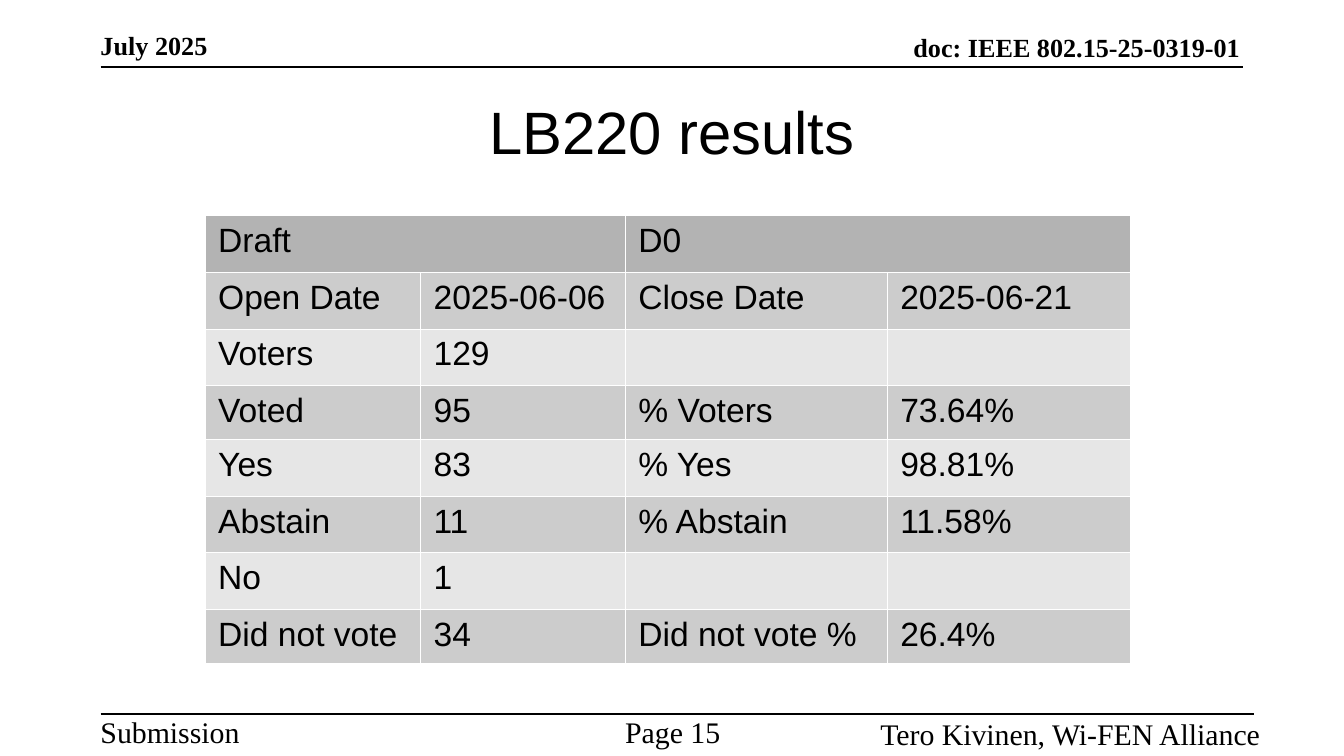
from lxml.etree import SubElement
from pptx import Presentation
from pptx.dml.color import RGBColor
from pptx.enum.shapes import MSO_CONNECTOR
from pptx.enum.text import MSO_ANCHOR, PP_ALIGN
from pptx.oxml.ns import qn
from pptx.util import Cm, Pt

COLORS = {
    "ink": "000000",
    "border": "FFFFFF",
    "header": "B3B3B3",
    "dark_band": "CCCCCC",
    "light_band": "E6E6E6",
}
SERIF = "Times New Roman"
SANS = "Arial"

RESULTS = [
    ["Draft", "", "D0", ""],
    ["Open Date", "2025-06-06", "Close Date", "2025-06-21"],
    ["Voters", "129", "", ""],
    ["Voted", "95", "% Voters", "73.64%"],
    ["Yes", "83", "% Yes", "98.81%"],
    ["Abstain", "11", "% Abstain", "11.58%"],
    ["No", "1", "", ""],
    ["Did not vote", "34", "Did not vote %", "26.4%"],
]
COLUMN_WIDTHS = [4.07, 3.87, 4.95, 4.6]
ROW_HEIGHTS = [1.07, 1.07, 1.07, 0.97, 1.07, 1.07, 1.07, 0.97]


class SlideBuilder:
    def __init__(self, slide):
        self.slide = slide

    def add_run(self, paragraph, text, size, font, bold=False):
        run = paragraph.add_run()
        run.text = text
        run.font.size = Pt(size)
        run.font.name = font
        run.font.bold = bold
        run.font.color.rgb = RGBColor.from_string(COLORS["ink"])

    def text(self, text, box, size, font=SERIF, bold=False,
             align=PP_ALIGN.LEFT, anchor=MSO_ANCHOR.TOP):
        shape = self.slide.shapes.add_textbox(*[Cm(length) for length in box])
        frame = shape.text_frame
        frame.word_wrap = True
        frame.vertical_anchor = anchor
        frame.margin_left = frame.margin_right = 0
        frame.margin_top = frame.margin_bottom = 0
        paragraph = frame.paragraphs[0]
        paragraph.alignment = align
        self.add_run(paragraph, text, size, font, bold)

    def rule(self, left, right, top):
        connector = self.slide.shapes.add_connector(
            MSO_CONNECTOR.STRAIGHT, Cm(left), Cm(top), Cm(right), Cm(top))
        connector.line.color.rgb = RGBColor.from_string(COLORS["ink"])
        connector.line.width = Pt(1)
        SubElement(connector._element.spPr, qn("a:effectLst"))

    def style_cell(self, cell, color):
        properties = cell._tc.get_or_add_tcPr()
        for side in ("lnL", "lnR", "lnT", "lnB"):
            line = SubElement(properties, qn(f"a:{side}"), w=str(Pt(0.06)))
            fill = SubElement(line, qn("a:solidFill"))
            SubElement(fill, qn("a:srgbClr"), val=COLORS["border"])
        cell.fill.solid()
        cell.fill.fore_color.rgb = RGBColor.from_string(COLORS[color])

    def table(self, rows, left, top, widths, heights):
        table = self.slide.shapes.add_table(
            len(rows), len(widths), Cm(left), Cm(top),
            Cm(sum(widths)), Cm(sum(heights))).table
        table.first_row = False
        table.horz_banding = False
        for column, width in zip(table.columns, widths):
            column.width = Cm(width)
        for row, height in zip(table.rows, heights):
            row.height = Cm(height)
        for first in (0, 2):
            table.cell(0, first).merge(table.cell(0, first + 1))
        for row_index, values in enumerate(rows):
            band = "dark_band" if row_index % 2 else "light_band"
            for column_index, value in enumerate(values):
                cell = table.cell(row_index, column_index)
                self.style_cell(cell, band if row_index else "header")
                if value:
                    paragraph = cell.text_frame.paragraphs[0]
                    self.add_run(paragraph, value, 18, SANS)


def main():
    presentation = Presentation()
    presentation.slide_width = Cm(25.4)
    presentation.slide_height = Cm(14.28)
    slide = presentation.slides.add_slide(presentation.slide_layouts[6])
    builder = SlideBuilder(slide)

    builder.text("July 2025", (1.9, 0.76, 7.09, 0.38), 14, bold=True,
                 anchor=MSO_ANCHOR.BOTTOM)
    builder.text("doc: IEEE 802.15-25-0319-01", (8.61, 0.81, 14.83, 0.38), 14,
                 bold=True, align=PP_ALIGN.RIGHT, anchor=MSO_ANCHOR.BOTTOM)
    builder.rule(1.9, 23.5, 1.27)

    builder.text("LB220 results", (1.27, 1.27, 22.86, 2.39), 32, font=SANS,
                 align=PP_ALIGN.CENTER, anchor=MSO_ANCHOR.MIDDLE)
    builder.table(RESULTS, 3.87, 4.07, COLUMN_WIDTHS, ROW_HEIGHTS)

    builder.rule(1.9, 23.7, 13.49)
    builder.text("Submission", (1.9, 13.49, 4.75, 0.58), 16)
    builder.text("Page 15 ", (10.41, 13.49, 4.75, 0.58), 16,
                 align=PP_ALIGN.CENTER)
    builder.text("Tero Kivinen, Wi-FEN Alliance", (14.5, 13.52, 9.32, 0.58), 16,
                 align=PP_ALIGN.RIGHT)

    presentation.save("out.pptx")


if __name__ == "__main__":
    main()
